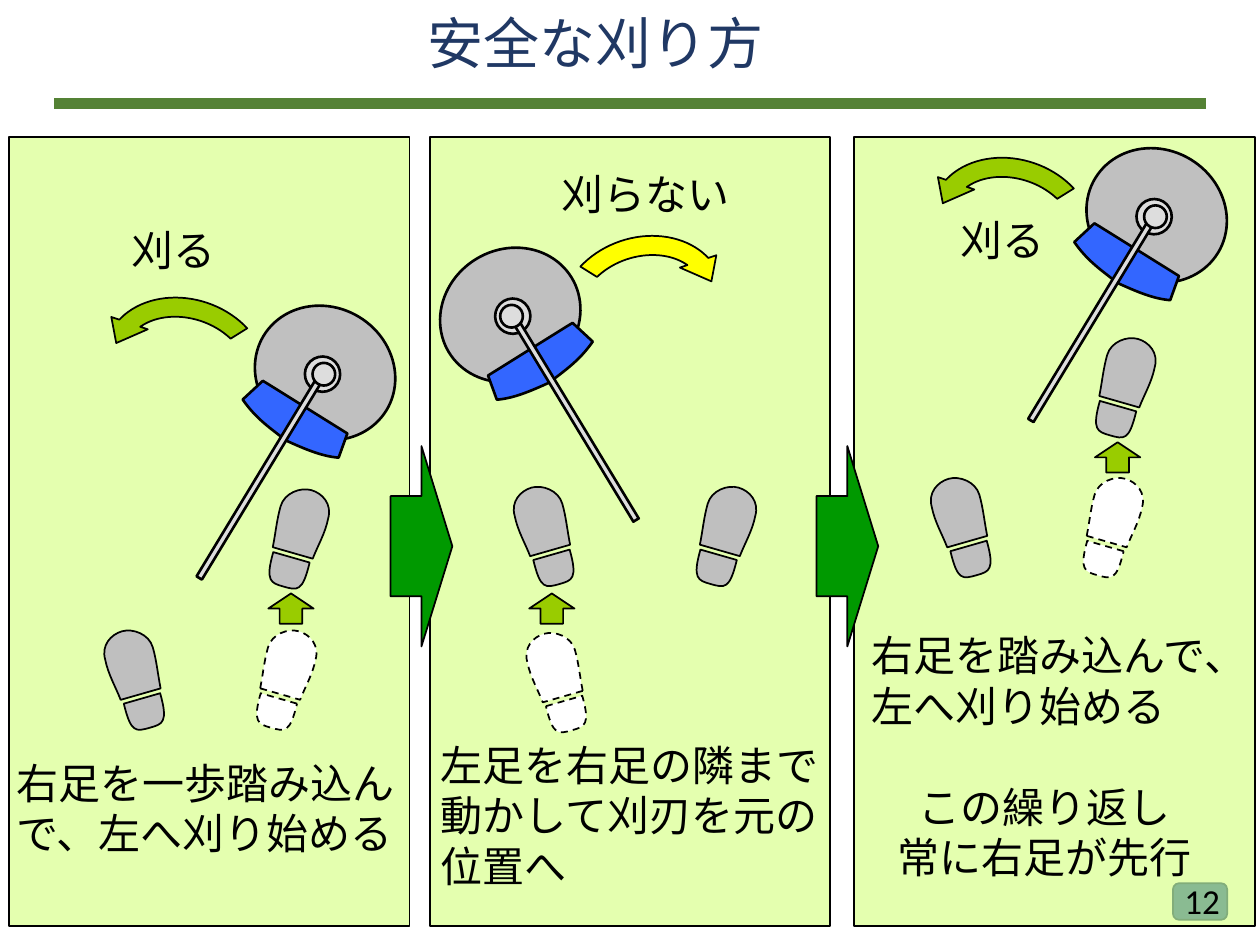
from lxml.etree import SubElement
from pptx import Presentation
from pptx.dml.color import RGBColor
from pptx.enum.dml import MSO_LINE
from pptx.enum.shapes import MSO_CONNECTOR, MSO_SHAPE
from pptx.enum.text import MSO_ANCHOR, MSO_AUTO_SIZE, PP_ALIGN
from pptx.oxml.ns import qn
from pptx.util import Pt

PX = 9144
THEME = {
    "title": "203864", "text": "000000", "line": "000000", "rule": "548235",
    "panel": "CCFF66", "badge": "4472C4", "badge_line": "325491",
    "foot": "BFBFBF", "old_foot": "FFFFFF", "head": "C0C0C0",
    "guard": "3366FF", "metal": "DDDDDD", "cut": "99CC00",
    "no_cut": "FFFF00", "next": "009900",
    "font": "Noto Sans CJK JP", "number_font": "Calibri",
    "title_size": 32, "text_size": 24, "number_size": 20,
}

SOLE = [[(3, 52)], [(36, 52)],
        [(37, 41), (40, 30), (39, 18)], [(39, 6), (29, 0), (20, 0)],
        [(11, 0), (0, 8), (0, 19)], [(0, 30), (2, 40), (3, 52)]]
HEEL = [[(1, 24)], [(31, 24)],
        [(31, 0), (26, 0), (16, 0)], [(4, 0), (0, 0), (1, 24)]]
GUARD = [[(6, 0)], [(7, 0)], [(11, 0)], [(85, 1)], [(89, 21)],
         [(77, 27), (63, 29), (46, 31)], [(32, 29), (18, 29), (0, 21)], [(6, 0)]]

prs = Presentation()
prs.slide_width, prs.slide_height = 1000 * PX, 750 * PX
slide = prs.slides.add_slide(prs.slide_layouts[5])
shapes = slide.shapes


def paint(shape, fill, rotation=0, weight=1, line="line"):
    shape.shadow.inherit = False
    shape.fill.solid()
    shape.fill.fore_color.rgb = RGBColor.from_string(THEME[fill])
    shape.line.color.rgb = RGBColor.from_string(THEME[line])
    shape.line.width = Pt(weight)
    shape.rotation = rotation
    return shape


def outline(segments, left, top, width, mirrored):
    placed = [(left + (width - x if mirrored else x), top + y)
              for segment in segments for x, y in segment]
    builder = shapes.build_freeform(*placed[0], scale=PX)
    builder.add_line_segments(placed[1:], close=True)
    shape = builder.convert_to_shape()
    steps = iter(list(shape.element.iter(qn("a:lnTo"))))
    for segment in segments[1:]:
        first, *others = [next(steps) for point in segment]
        if others:
            curve = first.makeelement(qn("a:cubicBezTo"))
            first.addprevious(curve)
            for step in (first, *others):
                curve.append(step[0])
                step.getparent().remove(step)
    return shape


badge = shapes.add_shape(MSO_SHAPE.ROUNDED_RECTANGLE, 931 * PX, 701 * PX, 43 * PX, 29 * PX)
paint(badge, "badge", line="badge_line")

for left in (7, 341, 678):
    panel = shapes.add_shape(MSO_SHAPE.RECTANGLE, left * PX, 109 * PX, 318 * PX, 626 * PX)
    paint(panel, "panel")
    color = panel.element.spPr.find(qn("a:solidFill"))[0]
    SubElement(color, qn("a:alpha"), val="52000")

for left, top, is_left, is_old in (
    (220, 388, False, False), (85, 500, True, False), (210, 500, False, True),
    (559, 386, False, False), (410, 386, True, False), (420, 502, True, True),
    (876, 268, False, False), (741, 379, True, False), (866, 379, False, True),
):
    heel_left = left + 15 if is_left else left - 7
    for part, angle in (
        (outline(SOLE, left, top, 39, is_left), 16),
        (outline(HEEL, heel_left, top + 54, 31, is_left), 196),
    ):
        paint(part, "old_foot" if is_old else "foot", 360 - angle if is_left else angle)
        if is_old:
            part.line.dash_style = MSO_LINE.DASH

for left, top in ((219, 465), (426, 465), (875, 345)):
    step_arrow = shapes.add_shape(MSO_SHAPE.RIGHT_ARROW, left * PX, top * PX, 24 * PX, 36 * PX)
    paint(step_arrow, "cut", 270)

for left, top, mirrored in ((201, 244, False), (348, 198, True), (861, 119, False)):
    tilt = 328.8 if mirrored else 31.2
    head = shapes.add_shape(MSO_SHAPE.OVAL, left * PX, top * PX, 114 * PX, 104 * PX)
    paint(head, "head", tilt, 1.5)
    guard_left = left + 37 if mirrored else left - 12
    paint(outline(GUARD, guard_left, top + 76, 89, mirrored), "guard", tilt, 1.5)
    for kind, dx, dy, width, height in (
        (MSO_SHAPE.OVAL, 41, 39, 28, 28),
        (MSO_SHAPE.RECTANGLE, 2, 45, 5, 183),
        (MSO_SHAPE.OVAL, 47, 44, 18, 18),
    ):
        part_left = left + (114 - dx - width if mirrored else dx)
        part = shapes.add_shape(kind, part_left * PX, (top + dy) * PX, width * PX, height * PX)
        paint(part, "metal", tilt, 1.5)

for left, top, fill, to_left in (
    (74, 230, "cut", True), (436, 181, "no_cut", False), (730, 119, "cut", True),
):
    swing = shapes.add_shape(MSO_SHAPE.CIRCULAR_ARROW, left * PX, top * PX, 147 * PX, 122 * PX)
    paint(swing, fill, 18.7 if to_left else 341.3)
    for index, value in enumerate((0.125, 11.42, 204.58, 138.37, 0.125)):
        swing.adjustments[index] = value
    if to_left:
        swing.element.spPr.xfrm.set("flipH", "1")

for left in (310, 648):
    next_arrow = shapes.add_shape(MSO_SHAPE.RIGHT_ARROW, left * PX, 354 * PX, 49 * PX, 159 * PX)
    paint(next_arrow, "next")

title = shapes.title
title.left, title.top, title.width, title.height = 329 * PX, -2 * PX, 389 * PX, 71 * PX
title.text_frame.text = "安全な刈り方"
styled = [(title.text_frame, PP_ALIGN.LEFT, MSO_ANCHOR.MIDDLE, 10, "title", "title_size", "font")]

for left, top, width, height, words, align in (
    (9, 596, 312, 91, "右足を一歩踏み込んで、左へ刈り始める", PP_ALIGN.LEFT),
    (346, 582, 316, 131, "左足を右足の隣まで動かして刈刃を元の位置へ", PP_ALIGN.LEFT),
    (688, 495, 287, 91, "右足を踏み込んで、左へ刈り始める", PP_ALIGN.LEFT),
    (683, 615, 292, 91, "この繰り返し\n常に右足が先行", PP_ALIGN.CENTER),
    (46, 173, 183, 50, "刈る", PP_ALIGN.CENTER),
    (421, 129, 183, 50, "刈らない", PP_ALIGN.CENTER),
    (704, 165, 183, 50, "刈る", PP_ALIGN.CENTER),
):
    caption = shapes.add_textbox(left * PX, top * PX, width * PX, height * PX).text_frame
    caption.text = words
    inset = 4 if align == PP_ALIGN.LEFT else 10
    styled.append((caption, align, MSO_ANCHOR.TOP, inset, "text", "text_size", "font"))

page = shapes.add_textbox(749 * PX, 695 * PX, 229 * PX, 40 * PX).text_frame
page.text = "12"
styled.append((page, PP_ALIGN.RIGHT, MSO_ANCHOR.MIDDLE, 10, "text", "number_size", "number_font"))

for frame, align, anchor, inset, color, size, font in styled:
    frame.word_wrap = True
    frame.auto_size = MSO_AUTO_SIZE.NONE
    frame.vertical_anchor = anchor
    frame.margin_left = frame.margin_right = inset * PX
    frame.margin_top = frame.margin_bottom = 5 * PX
    for paragraph in frame.paragraphs:
        paragraph.alignment = align
        for run in paragraph.runs:
            run.font.size = Pt(THEME[size])
            run.font.color.rgb = RGBColor.from_string(THEME[color])
            run.font.name = THEME[font]
            SubElement(run.font._element, qn("a:ea"), typeface=THEME[font])

rule = shapes.add_connector(MSO_CONNECTOR.STRAIGHT, 43 * PX, 82 * PX, 957 * PX, 82 * PX)
rule.line.color.rgb = RGBColor.from_string(THEME["rule"])
rule.line.width = Pt(6)
SubElement(rule.element.spPr, qn("a:effectLst"))

prs.save("out.pptx")
